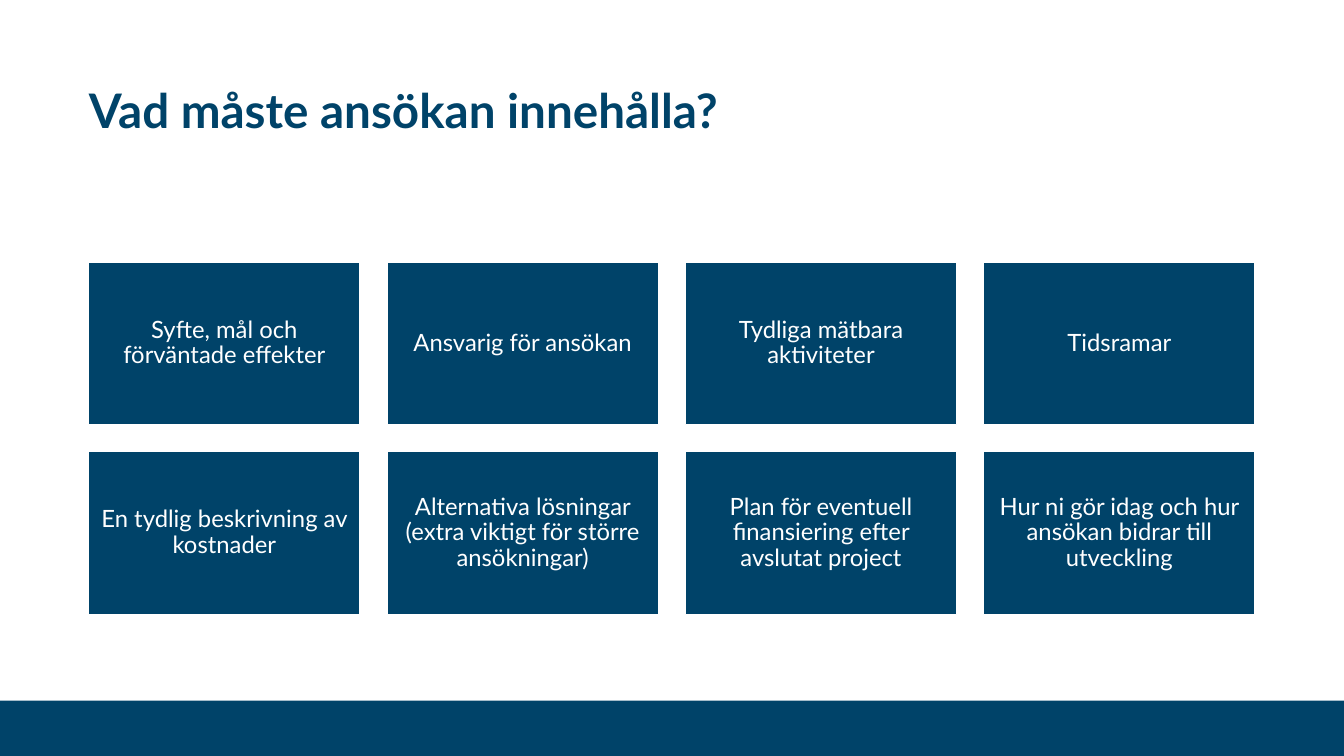
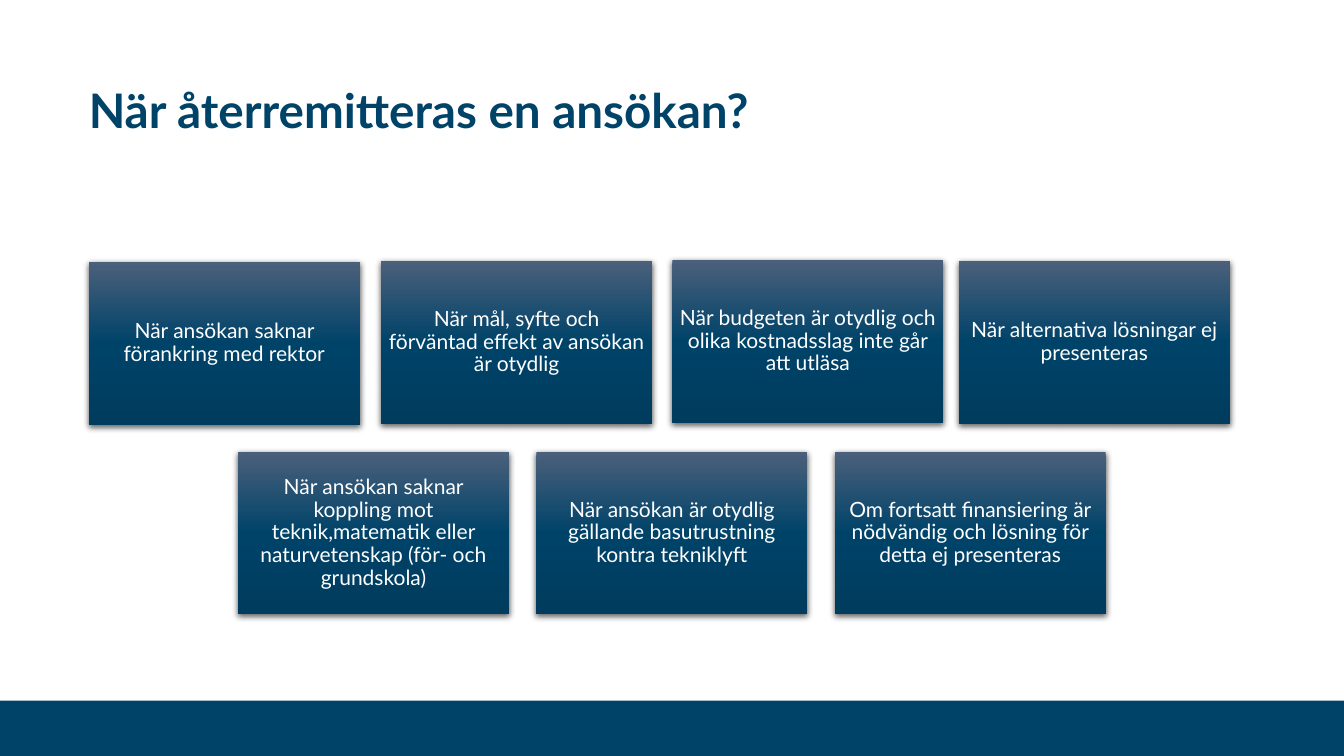
from copy import deepcopy

from lxml import etree
from pptx import Presentation
from pptx.dml.color import RGBColor
from pptx.enum import shapes, text
from pptx.oxml.ns import qn
from pptx.util import Pt

NAVY = RGBColor(0x00, 0x43, 0x69)
SLATE = RGBColor(0x4B, 0x60, 0x7B)
DEEP_NAVY = RGBColor(0x00, 0x3C, 0x5D)
WHITE = RGBColor(0xFF, 0xFF, 0xFF)
FONT = "Lato"

CONTENTS_TITLE = "Vad måste ansökan innehålla?"
CONTENTS_ROWS = [
    ["Syfte, mål och förväntade effekter", "Ansvarig för ansökan",
     "Tydliga mätbara aktiviteter", "Tidsramar"],
    ["En tydlig beskrivning av kostnader",
     "Alternativa lösningar (extra viktigt för större ansökningar)",
     "Plan för eventuell finansiering efter avslutat project",
     "Hur ni gör idag och hur ansökan bidrar till utveckling"],
]

RETURNED_TITLE = "När återremitteras en ansökan?"
RETURNED_TOP_ROW = [
    (63.4, 187.2, "När ansökan saknar förankring med rektor"),
    (272.2, 186.5, "När mål, syfte och förväntad effekt av ansökan är otydlig"),
    (480.2, 185.8, "När budgeten är otydlig och olika kostnadsslag inte går att utläsa"),
    (684.8, 186.5, "När alternativa lösningar ej presenteras"),
]
RETURNED_BOTTOM_ROW = [
    "När ansökan saknar koppling mot teknik,matematik eller naturvetenskap (för- och grundskola)",
    "När ansökan är otydlig gällande basutrustning kontra tekniklyft",
    "Om fortsatt finansiering är nödvändig och lösning för detta ej presenteras",
]

SLIDE_WIDTH, SLIDE_HEIGHT = 960, 540
MARGIN = 63.4
BAND_TOP = 500.4
CARD_WIDTH, CARD_HEIGHT = 193.7, 116.2
COLUMN_STEP, ROW_STEP = 213.1, 135.5
GRID_TOP = 187.2


def write_text(shape, wording, size, inset, anchor, alignment, color, bold=False):
    frame = shape.text_frame
    frame.word_wrap = True
    frame.vertical_anchor = anchor
    frame.margin_left = frame.margin_right = Pt(inset)
    frame.margin_top = frame.margin_bottom = Pt(inset)
    frame.text = wording
    paragraph = frame.paragraphs[0]
    paragraph.alignment = alignment
    paragraph.line_spacing = 0.9
    font = paragraph.runs[0].font
    font.name, font.size, font.bold = FONT, Pt(size), bold
    font.color.rgb = color


def add_rectangle(slide, left, top, width, height):
    shape = slide.shapes.add_shape(
        shapes.MSO_SHAPE.RECTANGLE, Pt(left), Pt(top), Pt(width), Pt(height))
    shape.shadow.inherit = False
    shape.fill.solid()
    shape.fill.fore_color.rgb = NAVY
    shape.line.fill.background()
    return shape


def add_titled_slide(presentation, title):
    slide = presentation.slides.add_slide(presentation.slide_layouts[6])
    add_rectangle(slide, 0, BAND_TOP, SLIDE_WIDTH, SLIDE_HEIGHT - BAND_TOP)
    title_box = slide.shapes.add_textbox(
        Pt(MARGIN), Pt(23), Pt(SLIDE_WIDTH - 2 * MARGIN), Pt(76.3))
    write_text(title_box, title, 34, 0, text.MSO_ANCHOR.BOTTOM,
               text.PP_ALIGN.LEFT, NAVY, bold=True)
    return slide


def add_card(slide, left, top, wording, size, inset):
    card = add_rectangle(slide, left, top, CARD_WIDTH, CARD_HEIGHT)
    write_text(card, wording, size, inset, text.MSO_ANCHOR.MIDDLE,
               text.PP_ALIGN.CENTER, WHITE)
    return card


def add_outlined_card(slide, left, top, wording):
    card = add_card(slide, left, top, wording, 17, 5)
    card.line.color.rgb = WHITE
    card.line.width = Pt(1)


def add_raised_card(slide, left, top, wording):
    card = add_card(slide, left, top, wording, 15, 4.5)
    card.fill.gradient()
    card.fill.gradient_angle = 270
    properties = card.element.spPr
    stop_list = properties.find(".//" + qn("a:gsLst"))
    stop_list.append(deepcopy(stop_list[-1]))
    colors = [(0, SLATE), (0.5, NAVY), (1, DEEP_NAVY)]
    for stop, (position, color) in zip(card.fill.gradient_stops, colors):
        stop.position = position
        stop.color.rgb = color
    shadow = etree.SubElement(
        properties.find(qn("a:effectLst")), qn("a:outerShdw"),
        blurRad=str(Pt(4.5)), dist=str(Pt(1.5)), dir="5400000",
        algn="ctr", rotWithShape="0")
    shade = etree.SubElement(shadow, qn("a:srgbClr"), val="000000")
    etree.SubElement(shade, qn("a:alpha"), val="63000")


def main():
    presentation = Presentation()
    presentation.slide_width = Pt(SLIDE_WIDTH)
    presentation.slide_height = Pt(SLIDE_HEIGHT)

    slide = add_titled_slide(presentation, CONTENTS_TITLE)
    for row, wordings in enumerate(CONTENTS_ROWS):
        for column, wording in enumerate(wordings):
            add_outlined_card(slide, MARGIN + column * COLUMN_STEP,
                              GRID_TOP + row * ROW_STEP, wording)

    slide = add_titled_slide(presentation, RETURNED_TITLE)
    for left, top, wording in RETURNED_TOP_ROW:
        add_raised_card(slide, left, top, wording)
    for column, wording in enumerate(RETURNED_BOTTOM_ROW):
        add_raised_card(slide, MARGIN + (column + 0.5) * COLUMN_STEP,
                        GRID_TOP + ROW_STEP, wording)

    presentation.save("out.pptx")


if __name__ == "__main__":
    main()
